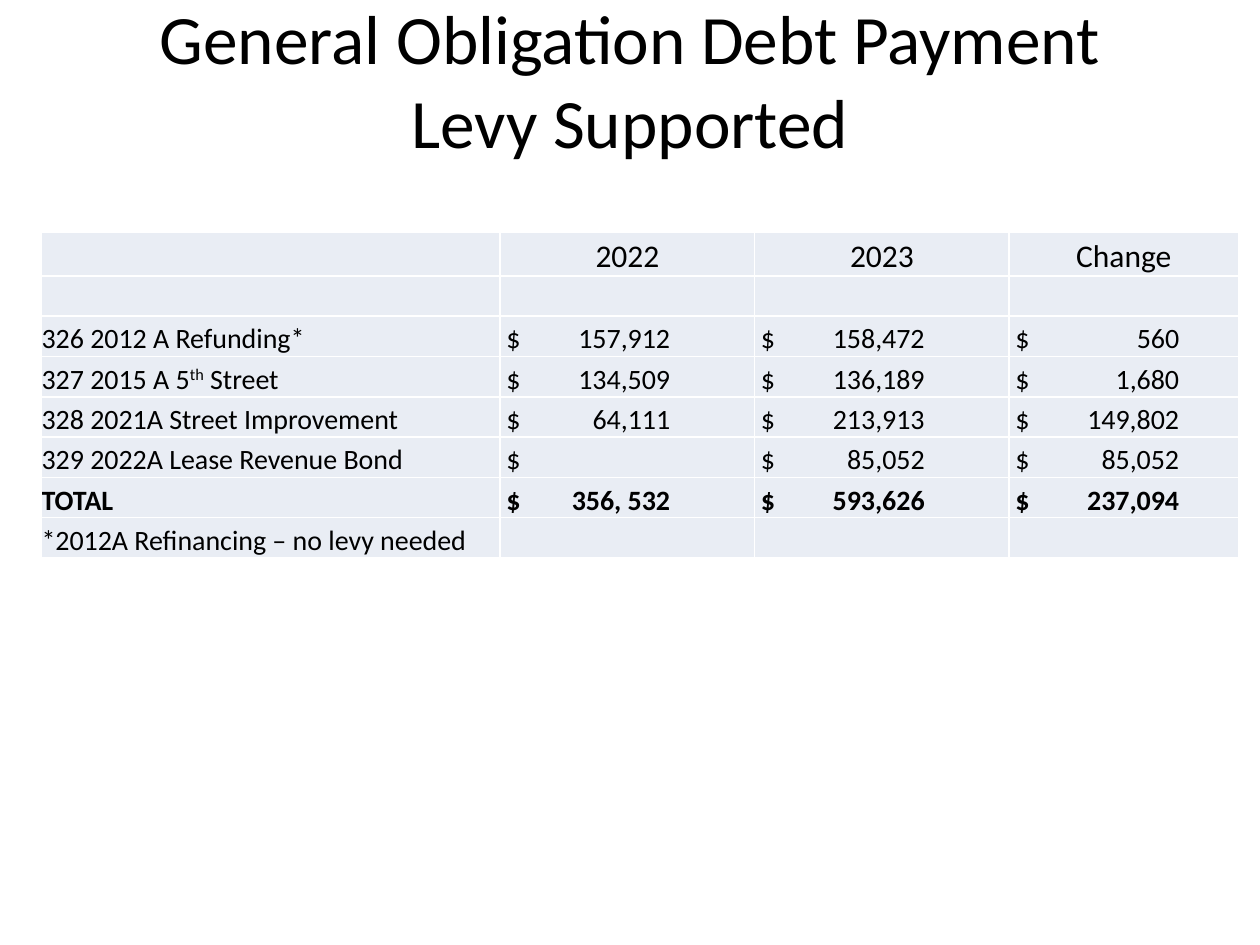
"""Build the general obligation debt payment slide."""
from lxml import etree
from pptx import Presentation
from pptx import util as u
from pptx.dml.color import RGBColor
from pptx.enum import text
from pptx.oxml.ns import qn

BLACK = RGBColor(0x00, 0x00, 0x00)
WHITE = RGBColor(0xFF, 0xFF, 0xFF)
PALE_BLUE = RGBColor(0xE9, 0xED, 0xF4)
FONT = "Calibri"

HEADING = "General Obligation Debt Payment\vLevy Supported"
YEARS = ["", "2022", "2023", "Change"]
DEBTS = [
    ["", "", "", ""],
    ["326 2012 A Refunding*", "157,912", "158,472", "560"],
    ["327 2015 A 5^th^ Street", "134,509", "136,189", "1,680"],
    ["328 2021A Street Improvement", "64,111", "213,913", "149,802"],
    ["329 2022A Lease Revenue Bond", "", "85,052", "85,052"],
    ["TOTAL", "356, 532", "593,626", "237,094"],
    ["*2012A Refinancing – no levy needed", "", "", ""],
]
NO_PAYMENT = "329 2022A Lease Revenue Bond"
COLUMN_WIDTHS = [3.64, 2.02, 2.02, 1.82]
HEADER_HEIGHT, ROW_HEIGHT = 0.35, 0.32
DOLLAR_INSET, AMOUNT_TAB = 0.05, 1.3


def write(frame, words, size=16, bold=False, align=None, tab=None):
    """Fill a text frame; words between carets are raised."""
    paragraph = frame.paragraphs[0]
    if tab:
        stops = etree.SubElement(paragraph._p.get_or_add_pPr(), qn("a:tabLst"))
        etree.SubElement(stops, qn("a:tab"), pos=str(u.Inches(tab)), algn="r")
    paragraph.alignment = align
    for index, part in enumerate(words.split("^")):
        for line, piece in enumerate(part.split("\v")):
            if line:
                paragraph.add_line_break()
            run = paragraph.add_run()
            run.text = piece
            run.font.name, run.font.size = FONT, u.Pt(size)
            run.font.bold, run.font.color.rgb = bold, BLACK
            if index % 2:
                run.font._element.set("baseline", "30000")


def style_cell(cell):
    """Give a cell its fill, insets and thin white borders."""
    cell.fill.solid()
    cell.fill.fore_color.rgb = PALE_BLUE
    cell.vertical_anchor = text.MSO_ANCHOR.BOTTOM
    cell.margin_left = cell.margin_right = cell.margin_top = cell.margin_bottom = 0
    properties = cell._tc.get_or_add_tcPr()
    for position, side in enumerate(("lnL", "lnR", "lnT", "lnB")):
        border = etree.Element(qn(f"a:{side}"), w=str(u.Pt(1)))
        fill = etree.SubElement(border, qn("a:solidFill"))
        etree.SubElement(fill, qn("a:srgbClr"), val=str(WHITE))
        properties.insert(position, border)


def add_heading(slide):
    """Place and write the slide title."""
    title = slide.shapes.title
    title.left, title.top = u.Inches(0.5), u.Inches(0)
    title.width, title.height = u.Inches(9), u.Inches(1.25)
    frame = title.text_frame
    frame.auto_size = text.MSO_AUTO_SIZE.NONE
    frame.vertical_anchor = text.MSO_ANCHOR.MIDDLE
    write(frame, HEADING, size=39.6, align=text.PP_ALIGN.CENTER)


def add_debt_table(slide):
    """Add the table of yearly payments and changes."""
    rows = [YEARS] + DEBTS
    heights = [HEADER_HEIGHT] + [ROW_HEIGHT] * len(DEBTS)
    table = slide.shapes.add_table(
        len(rows), len(YEARS), u.Inches(0.33), u.Inches(1.84),
        u.Inches(sum(COLUMN_WIDTHS)), u.Inches(sum(heights))).table
    table.first_row = table.horz_banding = False
    for column, width in zip(table.columns, COLUMN_WIDTHS):
        column.width = u.Inches(width)
    for r, (values, height) in enumerate(zip(rows, heights)):
        table.rows[r].height = u.Inches(height)
        bold = values[0] == "TOTAL"
        for c, value in enumerate(values):
            cell = table.cell(r, c)
            style_cell(cell)
            if r == 0 and value:
                write(cell.text_frame, value, size=18, align=text.PP_ALIGN.CENTER)
            elif c and (value or values[0] == NO_PAYMENT):
                cell.margin_left = u.Inches(DOLLAR_INSET)
                amount = f"$\t{value}" if value else "$"
                write(cell.text_frame, amount, bold=bold, tab=AMOUNT_TAB)
            elif value:
                write(cell.text_frame, value, bold=bold)


def main():
    """Create and save the presentation."""
    deck = Presentation()
    deck.slide_width, deck.slide_height = u.Inches(10), u.Inches(7.5)
    slide = deck.slides.add_slide(deck.slide_layouts[5])
    add_heading(slide)
    add_debt_table(slide)
    deck.save("out.pptx")


if __name__ == "__main__":
    main()
